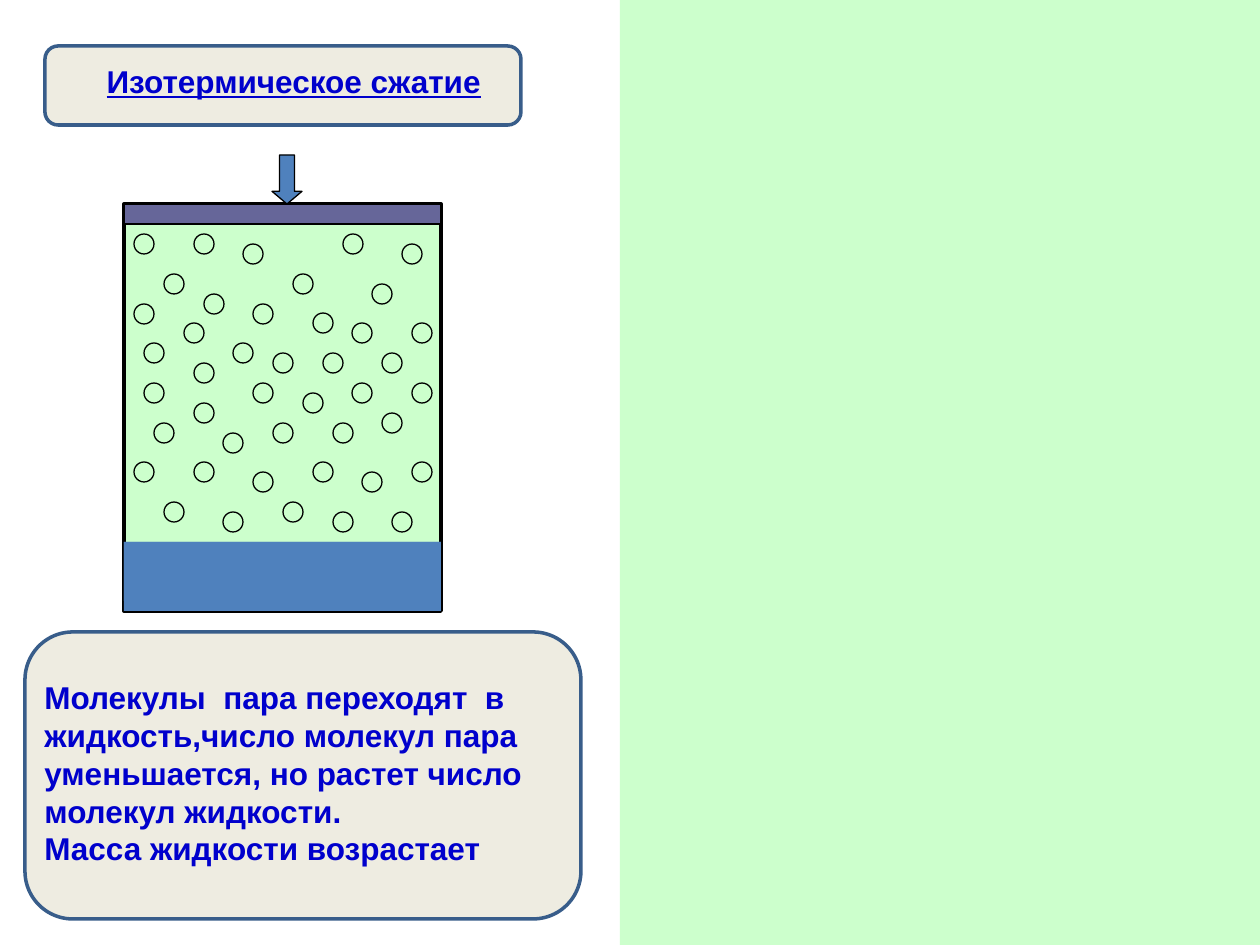
from pptx import Presentation
from pptx.dml.color import RGBColor
from pptx.enum.shapes import MSO_SHAPE as Shape
from pptx.enum.text import MSO_ANCHOR as Anchor, MSO_AUTO_SIZE as AutoSize, PP_ALIGN as Align
from pptx.util import Emu, Pt

PX_PER_INCH = 126
COLORS = {
    "vapour": "CCFFCC",
    "liquid": "4F81BD",
    "piston": "666699",
    "outline": "000000",
    "panel": "EEECE1",
    "panel_line": "385D8A",
    "text": "0000CC",
}

MOLECULE_SIZE = 20
MOLECULE_STEP = 9.93
FIRST_MOLECULE = (134, 234)
# Grid row: grid columns that hold a molecule
MOLECULES = {
    0: (0, 6, 21), 1: (11, 27), 4: (3, 16), 5: (24,), 6: (7,),
    7: (0, 12), 8: (18,), 9: (5, 22, 28), 11: (1, 10),
    12: (14, 19, 25), 13: (6,), 15: (1, 12, 22, 28), 16: (17,),
    17: (6,), 18: (25,), 19: (2, 14, 20), 20: (9,),
    23: (0, 6, 18, 28), 24: (12, 23), 27: (3, 15), 28: (9, 20, 26),
}


def px(length):
    return Emu(round(length * 914400 / PX_PER_INCH))


def rgb(name):
    return RGBColor.from_string(COLORS[name])


def add_figure(shapes, kind, box, fill, line=None, weight=0.75):
    figure = shapes.add_shape(kind, *map(px, box))
    figure.shadow.inherit = False
    figure.fill.solid()
    figure.fill.fore_color.rgb = rgb(fill)
    if line:
        figure.line.color.rgb = rgb(line)
        figure.line.width = Pt(weight)
    else:
        figure.line.fill.background()
    return figure


def add_panel(shapes, box):
    add_figure(shapes, Shape.ROUNDED_RECTANGLE, box, "panel", "panel_line", 2)


def write(holder, text, wrap, underline=None):
    frame = holder.text_frame
    frame.text = text
    frame.word_wrap = wrap
    frame.auto_size = AutoSize.SHAPE_TO_FIT_TEXT
    frame.vertical_anchor = Anchor.TOP
    for paragraph in frame.paragraphs:
        paragraph.alignment = Align.LEFT
        for run in paragraph.runs:
            font = run.font
            font.name = "Arial"
            font.size = Pt(18)
            font.bold = True
            font.underline = underline
            font.color.rgb = rgb("text")


def add_title(shapes, text, box):
    """Fill the title placeholder and bring it in front of its panel."""
    title = shapes.title
    title.left, title.top, title.width, title.height = map(px, box)
    write(title, text, wrap=False, underline=True)
    shapes._spTree.append(title._element)


def add_vessel(shapes):
    add_figure(shapes, Shape.RECTANGLE, (124, 204, 317, 407), "vapour", "outline", 2.25)
    for depth in (69, 59):
        add_figure(shapes, Shape.RECTANGLE, (124, 542, 317, depth), "liquid")


def add_piston(shapes):
    piston = shapes.add_group_shape().shapes
    add_figure(piston, Shape.RECTANGLE, (124, 204, 317, 20), "piston", "outline")
    arrow = add_figure(piston, Shape.DOWN_ARROW, (272, 155, 30, 49), "liquid", "outline")
    arrow.adjustments[1] = 0.42


def add_molecules(shapes):
    left, top = FIRST_MOLECULE
    for row, columns in MOLECULES.items():
        for column in columns:
            box = (left + round(column * MOLECULE_STEP), top + round(row * MOLECULE_STEP),
                   MOLECULE_SIZE, MOLECULE_SIZE)
            add_figure(shapes, Shape.OVAL, box, "vapour", "outline")


def main():
    deck = Presentation()
    deck.slide_width, deck.slide_height = px(1260), px(945)
    shapes = deck.slides.add_slide(deck.slide_layouts[5]).shapes

    add_vessel(shapes)
    add_piston(shapes)
    add_molecules(shapes)

    add_panel(shapes, (45, 46, 476, 79))
    add_title(shapes, "Изотермическое сжатие", (94, 56, 404, 50))

    add_panel(shapes, (25, 632, 556, 287))
    explanation = shapes.add_textbox(*map(px, (32, 672, 525, 204)))
    write(explanation,
          "Молекулы  пара переходят  в жидкость,число молекул пара "
          "уменьшается, но растет число молекул жидкости.\n"
          "Масса жидкости возрастает", wrap=True)

    add_figure(shapes, Shape.RECTANGLE, (620, 0, 640, 945), "vapour")
    deck.save("out.pptx")


if __name__ == "__main__":
    main()
